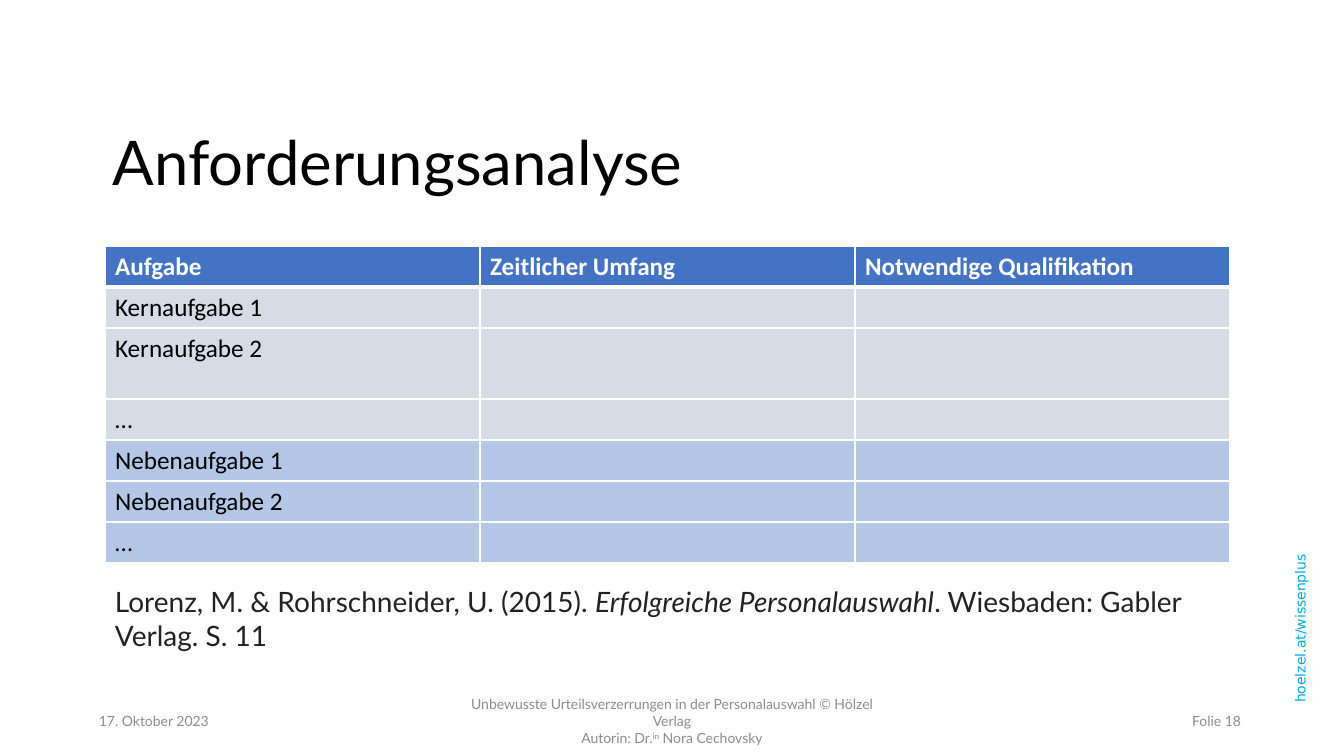
from pptx import Presentation
from pptx.dml.color import RGBColor
from pptx.enum.text import MSO_ANCHOR, PP_ALIGN
from pptx.oxml import parse_xml
from pptx.oxml.ns import nsdecls
from pptx.util import Emu, Pt

BLACK = RGBColor(0x00, 0x00, 0x00)
WHITE = RGBColor(0xFF, 0xFF, 0xFF)
INK = RGBColor(0x22, 0x22, 0x22)
FOOTER_GREY = RGBColor(0x8C, 0x8C, 0x8C)
LINK_BLUE = RGBColor(0x00, 0xA7, 0xE7)
HEADER_BLUE = RGBColor(0x44, 0x72, 0xC4)
CORE_GREY = RGBColor(0xD6, 0xDC, 0xE5)
SIDE_BLUE = RGBColor(0xB4, 0xC7, 0xE7)

# Content: a run is (text, style), "\n" is a line break
TITLE = [("Anforderungsanalyse", "")]
HEADERS = ["Aufgabe", "Zeitlicher Umfang", "Notwendige Qualifikation"]
TASKS = [  # label, fill, row height in px
    ("Kernaufgabe 1", CORE_GREY, 41),
    ("Kernaufgabe 2", CORE_GREY, 71),
    ("…", CORE_GREY, 41),
    ("Nebenaufgabe 1", SIDE_BLUE, 41),
    ("Nebenaufgabe 2", SIDE_BLUE, 41),
    ("…", SIDE_BLUE, 41),
]
CITATION = [
    ("Lorenz, M. & Rohrschneider, U. (2015). ", ""),
    ("Erfolgreiche Personalauswahl", "italic"),
    (". Wiesbaden: Gabler Verlag. S. 11", ""),
]
WEB_ADDRESS = [("hoelzel.at/wissenplus", "")]
FOOTERS = [  # left, width, alignment, runs
    (89, 302, PP_ALIGN.LEFT, [("17. Oktober 2023", "")]),
    (445, 454, PP_ALIGN.CENTER, [
        ("Unbewusste Urteilsverzerrungen in der Personalauswahl © Hölzel Verlag", ""),
        ("\n", ""),
        ("Autorin: Dr.", ""),
        ("in", "superscript"),
        (" Nora Cechovsky", ""),
    ]),
    (949, 302, PP_ALIGN.RIGHT, [("Folie 18", "")]),
]

# Geometry in px
SLIDE_W, SLIDE_H = 1344, 756
TABLE_LEFT, TABLE_TOP, COLUMN_W, HEADER_H = 105, 246, 375, 41
EMU_PER_PX = 914400 / 100.8


def px(length):
    return Emu(round(length * EMU_PER_PX))


def write(paragraph, runs, font_name, size, color, bold=False):
    for text, style in runs:
        if text == "\n":
            paragraph.add_line_break()
            continue
        run = paragraph.add_run()
        run.text = text
        run.font.name = font_name
        run.font.size = Pt(size)
        run.font.color.rgb = color
        run.font.bold = bold
        run.font.italic = style == "italic"
        if style == "superscript":
            run._r.get_or_add_rPr().set("baseline", "30000")


def add_text(slide, box, runs, size, color, font_name="Lato", align=PP_ALIGN.LEFT,
             anchor=MSO_ANCHOR.MIDDLE, spacing=1.0):
    text_box = slide.shapes.add_textbox(*map(px, box))
    frame = text_box.text_frame
    frame.word_wrap = True
    frame.vertical_anchor = anchor
    paragraph = frame.paragraphs[0]
    paragraph.alignment = align
    paragraph.line_spacing = spacing
    write(paragraph, runs, font_name, size, color)
    return text_box


def style_cell(cell, fill, bottom_width):
    # Borders come before the fill in the cell properties
    properties = cell._tc.get_or_add_tcPr()
    for side, width in (("L", 1), ("R", 1), ("T", 1), ("B", bottom_width)):
        properties.append(parse_xml(
            f'<a:ln{side} {nsdecls("a")} w="{Pt(width)}"><a:solidFill>'
            f'<a:srgbClr val="{WHITE}"/></a:solidFill></a:ln{side}>'))
    cell.fill.solid()
    cell.fill.fore_color.rgb = fill


def add_task_table(slide):
    rows = [(HEADERS, HEADER_BLUE, HEADER_H)]
    rows += [([label, "", ""], fill, height) for label, fill, height in TASKS]
    table = slide.shapes.add_table(
        len(rows), len(HEADERS), px(TABLE_LEFT), px(TABLE_TOP),
        px(COLUMN_W * len(HEADERS)), px(sum(row[2] for row in rows))).table
    for column in table.columns:
        column.width = px(COLUMN_W)
    for row_index, (labels, fill, height) in enumerate(rows):
        table.rows[row_index].height = px(height)
        is_header = row_index == 0
        for column_index, label in enumerate(labels):
            cell = table.cell(row_index, column_index)
            style_cell(cell, fill, 3 if is_header else 1)
            if label:
                write(cell.text_frame.paragraphs[0], [(label, "")], "Calibri", 18,
                      WHITE if is_header else BLACK, bold=is_header)


def main():
    deck = Presentation()
    deck.slide_width, deck.slide_height = px(SLIDE_W), px(SLIDE_H)
    slide = deck.slides.add_slide(deck.slide_layouts[6])

    # Web address along the right edge
    web_address = add_text(slide, (1152, 617, 296, 23), WEB_ADDRESS, 10, LINK_BLUE,
                           "DejaVu Sans", PP_ALIGN.CENTER, MSO_ANCHOR.TOP, 0.9)
    web_address.rotation = 270

    # Source, title and table
    add_text(slide, (105, 580, 1087, 78), CITATION, 20, INK, anchor=MSO_ANCHOR.TOP)
    add_text(slide, (103, 104, 1125, 123), TITLE, 44, BLACK, spacing=0.9)
    add_task_table(slide)

    # Footer
    for left, width, align, runs in FOOTERS:
        add_text(slide, (left, 701, width, 40), runs, 10, FOOTER_GREY, align=align)

    deck.save("out.pptx")


if __name__ == "__main__":
    main()
